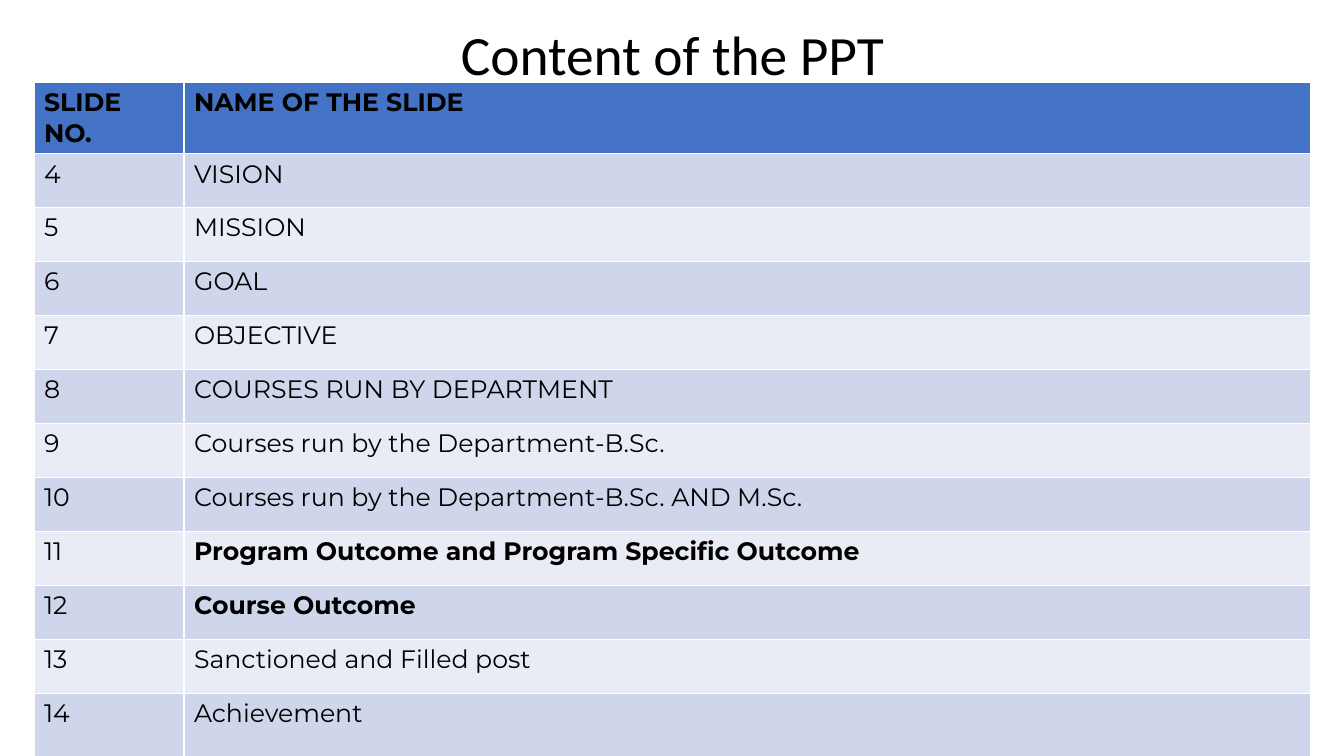
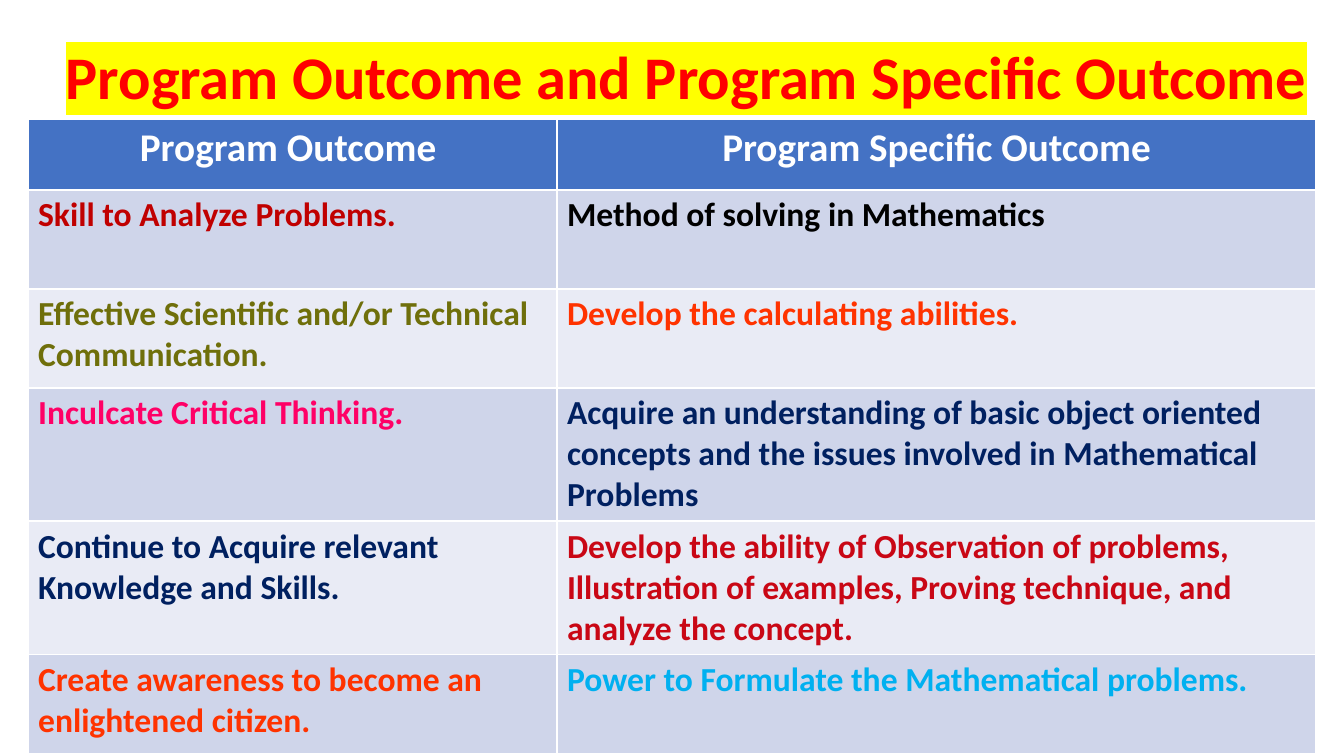
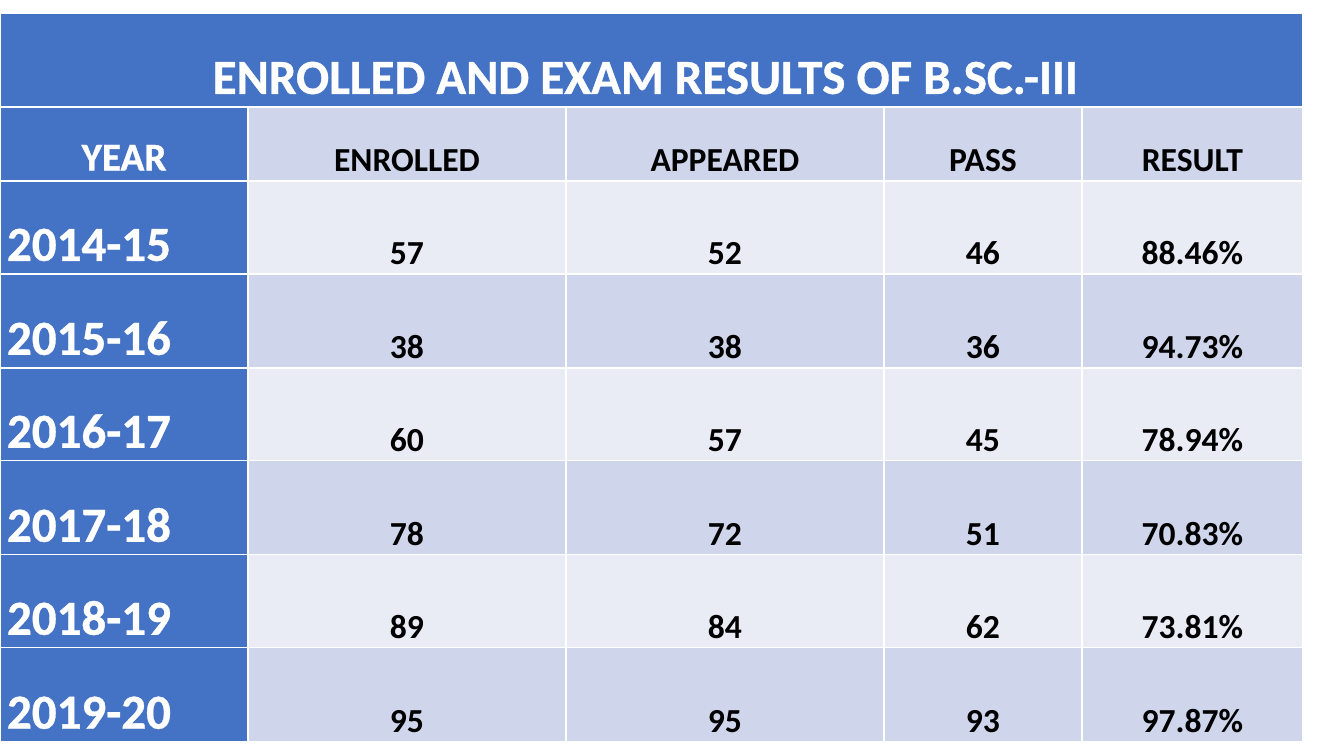
"""Build three department slides: contents, programme outcomes and exam results."""
from dataclasses import dataclass

from lxml.etree import SubElement
from pptx import Presentation
from pptx.dml.color import RGBColor
from pptx.enum.text import MSO_ANCHOR as Anchor, MSO_AUTO_SIZE as AutoSize, PP_ALIGN as Align
from pptx.oxml.ns import qn
from pptx.util import Emu, Pt

PX = 12192000 / 1344


@dataclass(frozen=True)
class Theme:
    header: str = "4472C4"
    bands: tuple = ("E9EBF5", "CFD5EA")
    white: str = "FFFFFF"
    black: str = "000000"
    red: str = "FF0000"
    yellow: str = "FFFF00"
    crimson: str = "C00000"
    scarlet: str = "C90715"
    olive: str = "6F6F0B"
    orange: str = "FF3300"
    pink: str = "FF0066"
    navy: str = "002060"
    sky: str = "00B0F0"
    font: str = "Calibri"
    contents_font: str = "Montserrat"
    contents_size: int = 18
    body: int = 24
    heading: int = 28
    banner: int = 35


theme = Theme()


def place_table(page, left, top, widths, heights):
    """Add a table with the given column widths and row heights in px."""
    frame = page.shapes.add_table(
        len(heights), len(widths), Emu(round(left * PX)), Emu(round(top * PX)),
        Emu(round(sum(widths) * PX)), Emu(round(sum(heights) * PX)))
    for column, width in zip(frame.table.columns, widths):
        column.width = Emu(round(width * PX))
    for row, height in zip(frame.table.rows, heights):
        row.height = Emu(round(height * PX))
    for index, row in enumerate(frame.table.rows):
        for cell in row.cells:
            cell.fill.solid()
            cell.fill.fore_color.rgb = RGBColor.from_string(
                theme.bands[index % 2] if index else theme.header)
    return frame.table


def write(box, text, size, color, bold=True, align=Align.LEFT, font=theme.font):
    """Write one formatted paragraph and return it."""
    para = box.text_frame.paragraphs[0]
    para.add_run().text = text
    para.alignment = align
    para.font.name = font
    para.font.size = Pt(size)
    para.font.bold = bold
    para.font.color.rgb = RGBColor.from_string(color)
    return para


deck = Presentation()
deck.slide_width = Emu(round(1344 * PX))
deck.slide_height = Emu(round(756 * PX))
title_only, blank = deck.slide_layouts[5], deck.slide_layouts[6]

titles = [
    ("Content of the PPT", (93, 21, 1159, 74), 39.6, theme.black, False, None),
    ("Program Outcome and Program Specific Outcome", (29, 40, 1315, 79), 43.2,
     theme.red, True, theme.yellow),
]
for text, place, size, color, bold, highlight in titles:
    title = deck.slides.add_slide(title_only).shapes.title
    title.left, title.top, title.width, title.height = (Emu(round(n * PX)) for n in place)
    title.text_frame.auto_size = AutoSize.NONE
    title.text_frame.word_wrap = True
    title.text_frame.vertical_anchor = Anchor.MIDDLE
    para = write(title, text, size, color, bold, Align.CENTER)
    para.line_spacing = 0.9
    if highlight:
        marker = SubElement(para.runs[0].font._element, qn("a:highlight"))
        SubElement(marker, qn("a:srgbClr"), val=highlight)

contents_page, outcomes_page = deck.slides

contents = [
    ("SLIDE NO.", "NAME OF THE SLIDE"),
    ("4", "VISION"),
    ("5", "MISSION"),
    ("6", "GOAL"),
    ("7", "OBJECTIVE"),
    ("8", "COURSES RUN BY DEPARTMENT"),
    ("9", "Courses run by the Department-B.Sc."),
    ("10", "Courses run by the Department-B.Sc. AND M.Sc."),
    ("11", "Program Outcome and Program Specific Outcome"),
    ("12", "Course Outcome"),
    ("13", "Sanctioned and Filled post"),
    ("14", "Achievement"),
]
table = place_table(contents_page, 34, 82, [150, 1127], [54] * 11 + [79])
for row, texts in enumerate(contents):
    for column, text in enumerate(texts):
        bold = row == 0 or "Outcome" in text
        write(table.cell(row, column), text, theme.contents_size, theme.black, bold,
              font=theme.contents_font)

outcomes = [
    (("Skill to Analyze Problems.", theme.crimson),
     ("Method of solving in Mathematics", theme.black)),
    (("Effective Scientific and/or Technical Communication.", theme.olive),
     ("Develop the calculating abilities.", theme.orange)),
    (("Inculcate Critical Thinking.", theme.pink),
     ("Acquire an understanding of basic object oriented concepts and the issues "
      "involved in Mathematical Problems", theme.navy)),
    (("Continue to Acquire relevant Knowledge and Skills.", theme.navy),
     ("Develop the ability of Observation of problems, Illustration of examples, "
      "Proving technique, and analyze the concept.", theme.scarlet)),
    (("Create awareness to become an enlightened citizen.", theme.orange),
     ("Power to Formulate the Mathematical problems.", theme.sky)),
]
table = place_table(outcomes_page, 28, 119, [529, 759], [71] + [99] * 5)
for column, text in enumerate(("Program Outcome ", "Program Specific Outcome")):
    write(table.cell(0, column), text, theme.heading, theme.white, align=Align.CENTER)
for row, entries in enumerate(outcomes, 1):
    for column, (text, color) in enumerate(entries):
        write(table.cell(row, column), text, theme.body, color)

results = [
    ("ENROLLED AND EXAM RESULTS OF B.SC.-III ",),
    ("YEAR", "ENROLLED", "APPEARED", "PASS", "RESULT"),
    ("2014-15", "57", "52", "46", "88.46%"),
    ("2015-16", "38", "38", "36", "94.73%"),
    ("2016-17", "60", "57", "45", "78.94%"),
    ("2017-18", "78", "72", "51", "70.83%"),
    ("2018-19", "89", "84", "62", "73.81%"),
    ("2019-20", "95", "95", "93", "97.87%"),
]
results_page = deck.slides.add_slide(blank)
table = place_table(results_page, 0, 13, [248, 318, 318, 198, 221], [94, 74] + [93, 94] * 3)
table.first_col = True
table.cell(0, 0).merge(table.cell(0, 4))
for row, texts in enumerate(results):
    for column, text in enumerate(texts):
        cell = table.cell(row, column)
        cell.vertical_anchor = Anchor.BOTTOM
        cell.margin_left = cell.margin_right = Emu(round(7 * PX))
        cell.margin_top = cell.margin_bottom = 0
        size, color = theme.body, theme.black
        if column == 0:
            size, color = theme.heading if row == 1 else theme.banner, theme.white
            cell.fill.fore_color.rgb = RGBColor.from_string(theme.header)
        align = Align.LEFT if column == 0 and row > 1 else Align.CENTER
        para = write(cell, text, size, color, align=align)
        para.line_spacing = 1.07
        para.space_after = Pt(8)
        if column == 0:
            width = Pt(0.53 if row else 0.75)
            outline = SubElement(para.runs[0].font._element, qn("a:ln"), w=str(width))
            SubElement(SubElement(outline, qn("a:solidFill")), qn("a:srgbClr"), val=theme.white)

deck.save("out.pptx")
